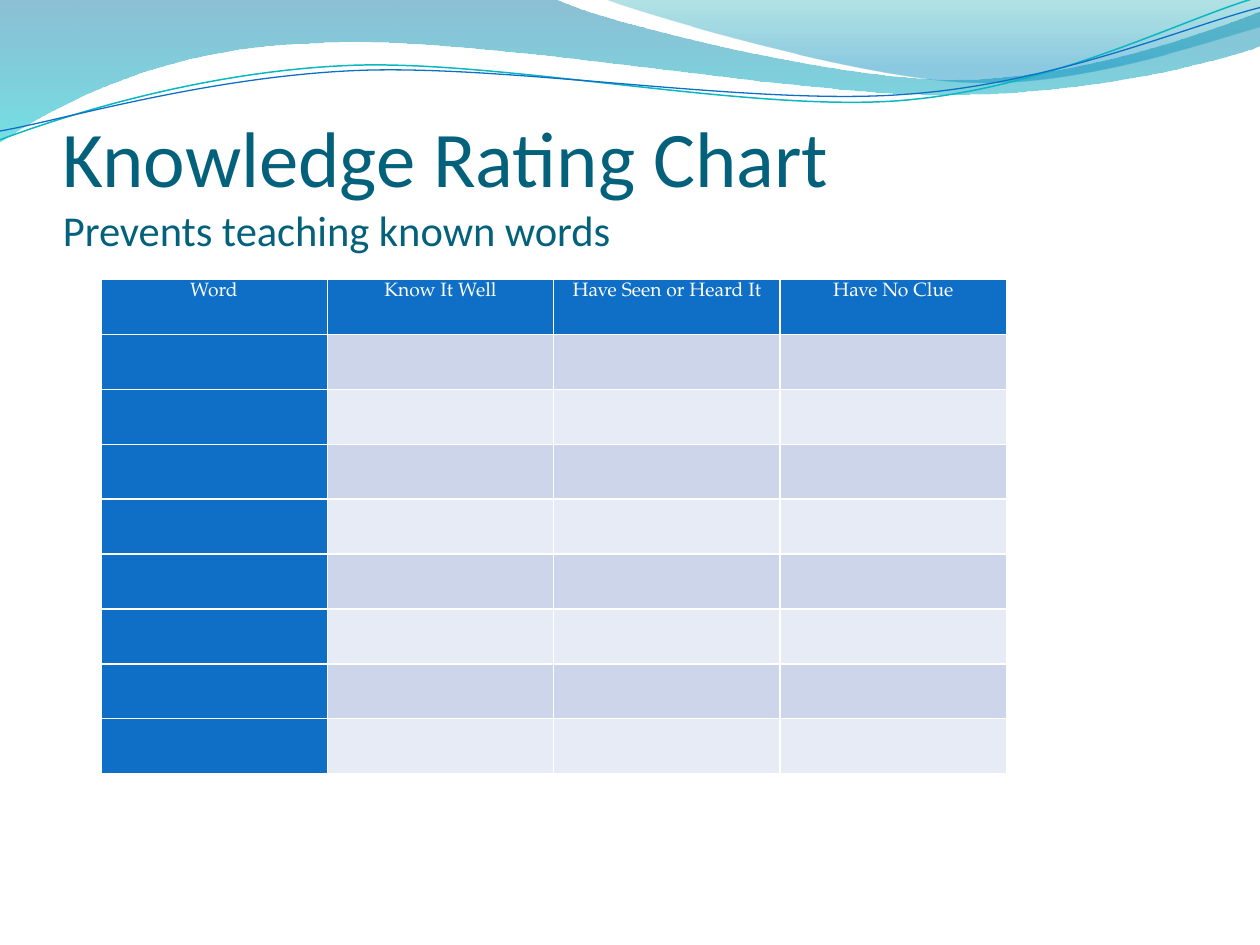
from lxml.etree import SubElement
from pptx import Presentation
from pptx.dml.color import RGBColor as RGB
from pptx.enum.text import MSO_ANCHOR as Anchor, PP_ALIGN as Align
from pptx.oxml.ns import qn
from pptx.util import Inches, Pt

COLORS = {
    "title": "04617B",
    "blue": "0F6FC6",
    "teal": "0AB8BF",
    "white": "FFFFFF",
    "dark_band": "CCD5EA",
    "light_band": "E7EBF5",
    "deep_sea": "0074A1",
    "aqua": "00C6CF",
    "lagoon": "00A1A9",
    "sky": "008BBF",
}
HEADERS = ["Word", "Know It Well", "Have Seen or Heard It", "Have No Clue"]
ROW_COUNT = 9

LEFT_WAVE = [
    [(0, 0)],
    [(4.4, -0.01)],
    [(4.76, 0.17), (6.64, 0.63), (7.58, 0.63)],
    [(8.53, 0.63), (9.58, 0.26), (10, 0.09)],
    [(10.01, 0.36)],
    [(9.83, 0.44), (8.7, 0.76), (7.46, 0.75)],
    [(6.22, 0.75), (3.82, 0.28), (2.57, 0.34)],
    [(1.29, 0.36), (0.46, 0.83), (-0.01, 1.13)],
    [(0, 0)],
]
RIGHT_WAVE = [
    [(4.79, -0.01)],
    [(5.09, 0.11), (6.82, 0.62), (7.69, 0.65)],
    [(8.56, 0.69), (9.61, 0.32), (10, 0.21)],
    [(10, 0)],
    [(4.79, -0.01)],
]
TEAL_LINE = [
    [(0, 1.11)],
    [(0.48, 0.93), (1.58, 0.57), (2.77, 0.52)],
    [(3.95, 0.47), (5.93, 0.89), (7.13, 0.8)],
    [(8.33, 0.71), (9.38, 0.15), (9.98, -0.02)],
]
BLUE_LINE = [
    [(0, 1.04)],
    [(0.47, 0.96), (1.64, 0.61), (2.83, 0.56)],
    [(4.03, 0.51), (5.97, 0.84), (7.17, 0.75)],
    [(8.36, 0.67), (9.41, 0.21), (10, 0.06)],
]


def color(name):
    return RGB.from_string(COLORS[name])


def bend(shape, segments):
    lines = list(shape.element.iter(qn("a:lnTo")))
    for line, segment in zip(lines, segments[1:]):
        if len(segment) == 3:
            line.tag = qn("a:cubicBezTo")
            for index, (x, y) in enumerate(segment[:2]):
                point = SubElement(
                    line, qn("a:pt"), x=str(Inches(x) - shape.left), y=str(Inches(y) - shape.top)
                )
                line.insert(index, point)


def add_outline(page, segments, close):
    start, *rest = [tuple(Inches(value) for value in segment[-1]) for segment in segments]
    builder = page.shapes.build_freeform(*start)
    builder.add_line_segments(rest, close=close)
    shape = builder.convert_to_shape()
    bend(shape, segments)
    shape.shadow.inherit = False
    return shape


def add_wave(page, segments, stops):
    shape = add_outline(page, segments, True)
    shape.line.fill.background()
    shape.fill.gradient()
    shape.fill.gradient_angle = 270
    for stop, (position, name, _) in zip(shape.fill.gradient_stops, stops):
        stop.position = position
        stop.color.rgb = color(name)
    for node, (_, _, opacity) in zip(shape.element.iter(qn("a:srgbClr")), stops):
        SubElement(node, qn("a:alpha"), val=str(opacity * 1000))


def add_wave_line(page, segments, name, width):
    shape = add_outline(page, segments, False)
    shape.fill.background()
    shape.line.color.rgb = color(name)
    shape.line.width = Pt(width)


def style_span(span, font, size, name):
    for key, value in {"name": font, "size": Pt(size)}.items():
        setattr(span.font, key, value)
    span.font.color.rgb = color(name)


def add_title(page):
    box = page.shapes.add_textbox(Inches(0.5), Inches(0.77), Inches(9), Inches(1.25))
    frame = box.text_frame
    layout = {
        "word_wrap": True,
        "vertical_anchor": Anchor.BOTTOM,
        "margin_left": 0,
        "margin_top": Inches(0.05),
        "margin_right": 0,
        "margin_bottom": 0,
    }
    for key, value in layout.items():
        setattr(frame, key, value)
    para = frame.paragraphs[0]
    span = para.add_run()
    span.text = "Knowledge Rating Chart"
    style_span(span, "Calibri", 45, "title")
    para.add_line_break()
    span = para.add_run()
    span.text = "Prevents teaching known words"
    style_span(span, "Calibri", 24.3, "title")


def add_borders(cell):
    properties = cell._tc.get_or_add_tcPr()
    for side in "LRTB":
        line = SubElement(properties, qn(f"a:ln{side}"), w=str(Pt(1)))
        fill = SubElement(line, qn("a:solidFill"))
        SubElement(fill, qn("a:srgbClr"), val=COLORS["white"])


def fill_header(cell, text):
    margins = {
        "margin_left": Inches(0.04),
        "margin_top": 0,
        "margin_right": Inches(0.04),
        "margin_bottom": 0,
    }
    for key, value in margins.items():
        setattr(cell, key, value)
    para = cell.text_frame.paragraphs[0]
    para.alignment = Align.CENTER
    para.line_spacing = 1.15
    span = para.add_run()
    span.text = text
    style_span(span, "TeX Gyre Pagella", 11, "white")


def add_rating_table(page):
    frame = page.shapes.add_table(
        ROW_COUNT, len(HEADERS), Inches(0.8), Inches(2.22), Inches(7.19), Inches(3.92)
    )
    table = frame.table
    for row in range(ROW_COUNT):
        band = "dark_band" if row % 2 else "light_band"
        for column, header in enumerate(HEADERS):
            cell = table.cell(row, column)
            add_borders(cell)
            cell.fill.solid()
            cell.fill.fore_color.rgb = color("blue" if row == 0 or column == 0 else band)
            if row == 0:
                fill_header(cell, header)


def main():
    deck = Presentation()
    deck.slide_width, deck.slide_height = Inches(10), Inches(7.5)
    page = deck.slides.add_slide(deck.slide_layouts[6])
    add_wave(page, LEFT_WAVE, [(0, "deep_sea", 45), (1, "aqua", 55)])
    add_wave(page, RIGHT_WAVE, [(0, "lagoon", 30), (0.8, "sky", 45)])
    add_wave_line(page, TEAL_LINE, "teal", 0.85)
    add_wave_line(page, BLUE_LINE, "blue", 0.75)
    add_title(page)
    add_rating_table(page)
    deck.save("out.pptx")


if __name__ == "__main__":
    main()
